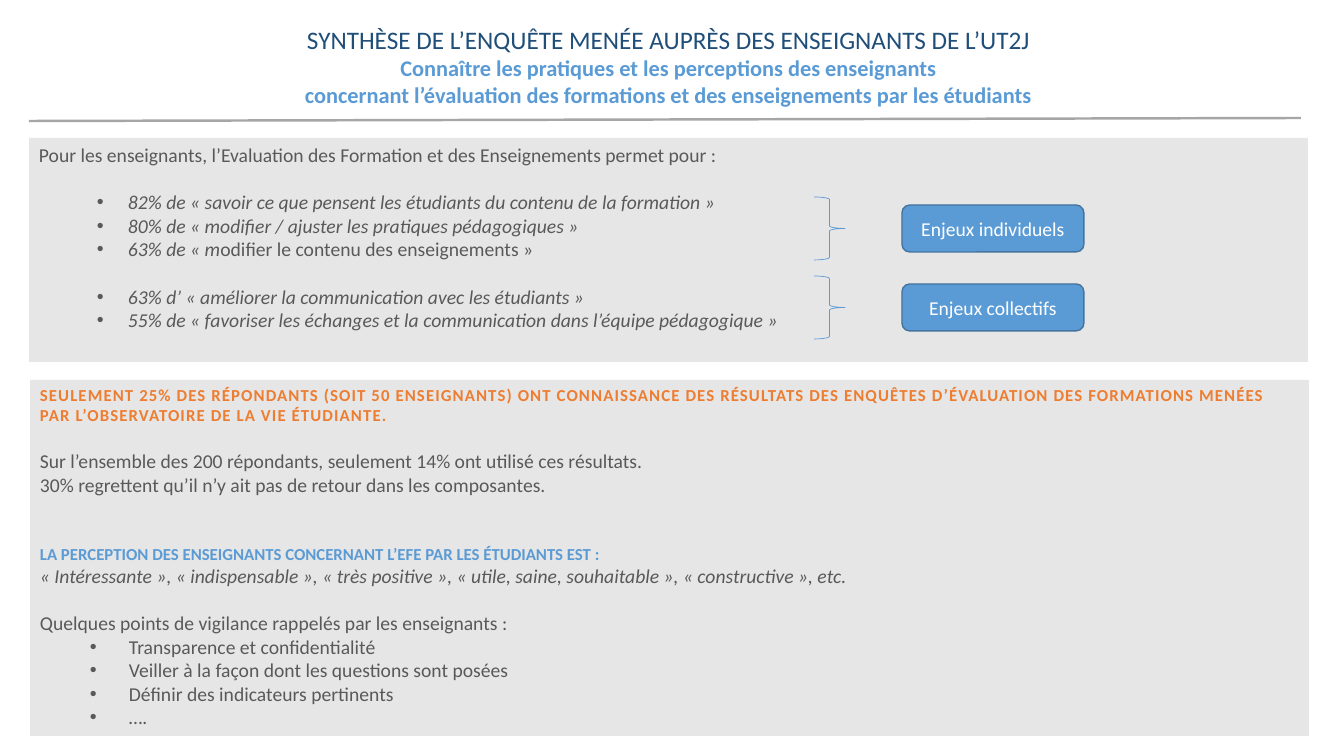
from lxml import etree
from pptx import Presentation
from pptx import util as u
from pptx.dml.color import RGBColor
from pptx.enum import shapes, text
from pptx.oxml.ns import qn

PX = 9144000 / 1008  # EMU per px, at 100.8 px to the inch
GAP = 17             # one empty line of 14 pt text, in points
PANEL = RGBColor(0xE7, 0xE6, 0xE6)
BLUE = RGBColor(0x5B, 0x9B, 0xD5)
EDGE = RGBColor(0x43, 0x73, 0x9E)
NAVY = RGBColor(0x1F, 0x4E, 0x79)
ORANGE = RGBColor(0xED, 0x7D, 0x31)
GREY = RGBColor(0x59, 0x59, 0x59)
RULE = RGBColor(0xA6, 0xA6, 0xA6)
WHITE = RGBColor(0xFF, 0xFF, 0xFF)

# Run styles: size, colour, bold, italic, letter spacing in 1/100 pt
BODY = (14, GREY, False, False, 0)
QUOTE = (14, GREY, False, True, 0)
ALERT = (12, ORANGE, True, False, 80)
HEADING = (12, BLUE, True, False, 0)
TITLE = (18, NAVY, False, False, 0)
SUBTITLE = (16, BLUE, True, False, 0)
LABEL = (14, WHITE, False, False, 0)


def add_box(kind, left, top, width, height, fill=None, line=None, line_width=1):
    box = page.shapes.add_shape(kind, *[round(n * PX) for n in (left, top, width, height)])
    box.shadow.inherit = False
    if fill is None:
        box.fill.background()
    else:
        box.fill.solid()
        box.fill.fore_color.rgb = fill
    if line is None:
        box.line.fill.background()
    else:
        box.line.color.rgb = line
        box.line.width = u.Pt(line_width)
    return box


def write(box, rows, align=text.PP_ALIGN.LEFT, anchor=text.MSO_ANCHOR.TOP):
    """Each row is: space before in pt, hanging bullet in px (0 for none), runs."""
    frame = box.text_frame
    frame.word_wrap = True
    frame.vertical_anchor = anchor
    for index, (before, hanging, runs) in enumerate(rows):
        para = frame.add_paragraph() if index else frame.paragraphs[0]
        para.alignment = align
        para.space_before = u.Pt(before)
        if hanging:
            props = para._p.get_or_add_pPr()
            props.set("marL", str(round(89 * PX)))
            props.set("indent", str(round(-hanging * PX)))
            etree.SubElement(props, qn("a:buFont")).set("typeface", "Arial")
            etree.SubElement(props, qn("a:buChar")).set("char", "•")
        for words, (size, colour, bold, italic, spacing) in runs:
            span = para.add_run()
            span.text = words
            span.font.name = "Calibri"
            span.font.size = u.Pt(size)
            span.font.color.rgb = colour
            span.font.bold = bold
            span.font.italic = italic
            if spacing:
                span.font._element.set("spc", str(spacing))


deck = Presentation()
deck.slide_width = round(1344 * PX)
deck.slide_height = round(756 * PX)
page = deck.slides.add_slide(deck.slide_layouts[6])

# Upper panel: what the evaluation allows
benefits = add_box(shapes.MSO_SHAPE.RECTANGLE, 29, 138, 1279, 224, PANEL)
write(benefits, [
    (0, 0, [("Pour les enseignants, l’Evaluation des Formation et des Enseignements permet pour :", BODY)]),
    (GAP, 31, [("82% de « savoir ce que pensent les étudiants du contenu de la formation »", QUOTE)]),
    (0, 31, [("80% de « modifier / ajuster les pratiques pédagogiques »", QUOTE)]),
    (0, 31, [("63% de « m", QUOTE), ("odifier le contenu des enseignements »", BODY)]),
    (GAP, 31, [("63% d’ « améliorer la communication avec les étudiants »", QUOTE)]),
    (0, 31, [("55% de « favoriser les échanges et la communication dans l’équipe pédagogique »", QUOTE)]),
])

# Braces and the stakes they lead to
for index, stake in enumerate(["Enjeux individuels", "Enjeux collectifs"]):
    top = 197 + 79 * index
    add_box(shapes.MSO_SHAPE.RIGHT_BRACE, 814, top, 31, 63, line=BLUE, line_width=0.5)
    button = add_box(shapes.MSO_SHAPE.ROUNDED_RECTANGLE, 902, top + 8, 182, 47, BLUE, EDGE)
    write(button, [(0, 0, [(stake, LABEL)])], text.PP_ALIGN.CENTER, text.MSO_ANCHOR.MIDDLE)

# Lower panel: knowledge of the results and perception
findings = add_box(shapes.MSO_SHAPE.RECTANGLE, 30, 380, 1279, 356, PANEL)
write(findings, [
    (0, 0, [("SEULEMENT 25% DES RÉPONDANTS (SOIT 50 ENSEIGNANTS) ONT CONNAISSANCE DES RÉSULTATS DES "
             "ENQUÊTES D’ÉVALUATION DES FORMATIONS MENÉES PAR L’OBSERVATOIRE DE LA VIE ÉTUDIANTE.", ALERT)]),
    (GAP, 0, [("Sur l’ensemble des 200 répondants, seulement 14% ont utilisé ces résultats.", BODY)]),
    (0, 0, [("30% regrettent qu’il n’y ait pas de retour dans les composantes.", BODY)]),
    (2 * GAP, 0, [("LA PERCEPTION DES ENSEIGNANTS CONCERNANT L’EFE PAR LES ÉTUDIANTS EST :", HEADING)]),
    (0, 0, [("« Intéressante », « indispensable », « très positive », « utile, saine, souhaitable », "
             "« constructive », etc.", QUOTE)]),
    (GAP, 0, [("Quelques points de vigilance rappelés par les enseignants :", BODY)]),
    (0, 39, [("Transparence et confidentialité", BODY)]),
    (0, 39, [("Veiller à la façon dont les questions sont posées", BODY)]),
    (0, 39, [("Définir des indicateurs pertinents", BODY)]),
    (0, 39, [("….", BODY)]),
])

# Title
title = page.shapes.add_textbox(*[round(n * PX) for n in (29, 19, 1279, 95)])
write(title, [
    (0, 0, [("SYNTHÈSE DE L’ENQUÊTE MENÉE AUPRÈS DES ENSEIGNANTS DE L’UT2J", TITLE)]),
    (0, 0, [("Connaître les pratiques et les perceptions des enseignants", SUBTITLE)]),
    (0, 0, [("concernant l’évaluation des formations et des enseignements par les étudiants", SUBTITLE)]),
], text.PP_ALIGN.CENTER)

# Rule under the title
rule = page.shapes.add_connector(shapes.MSO_CONNECTOR.STRAIGHT,
                                 *[round(n * PX) for n in (29, 121, 1301, 118)])
rule.line.color.rgb = RULE
rule.line.width = u.Pt(1.75)
etree.SubElement(rule._element.spPr, qn("a:effectLst"))

deck.save("out.pptx")
